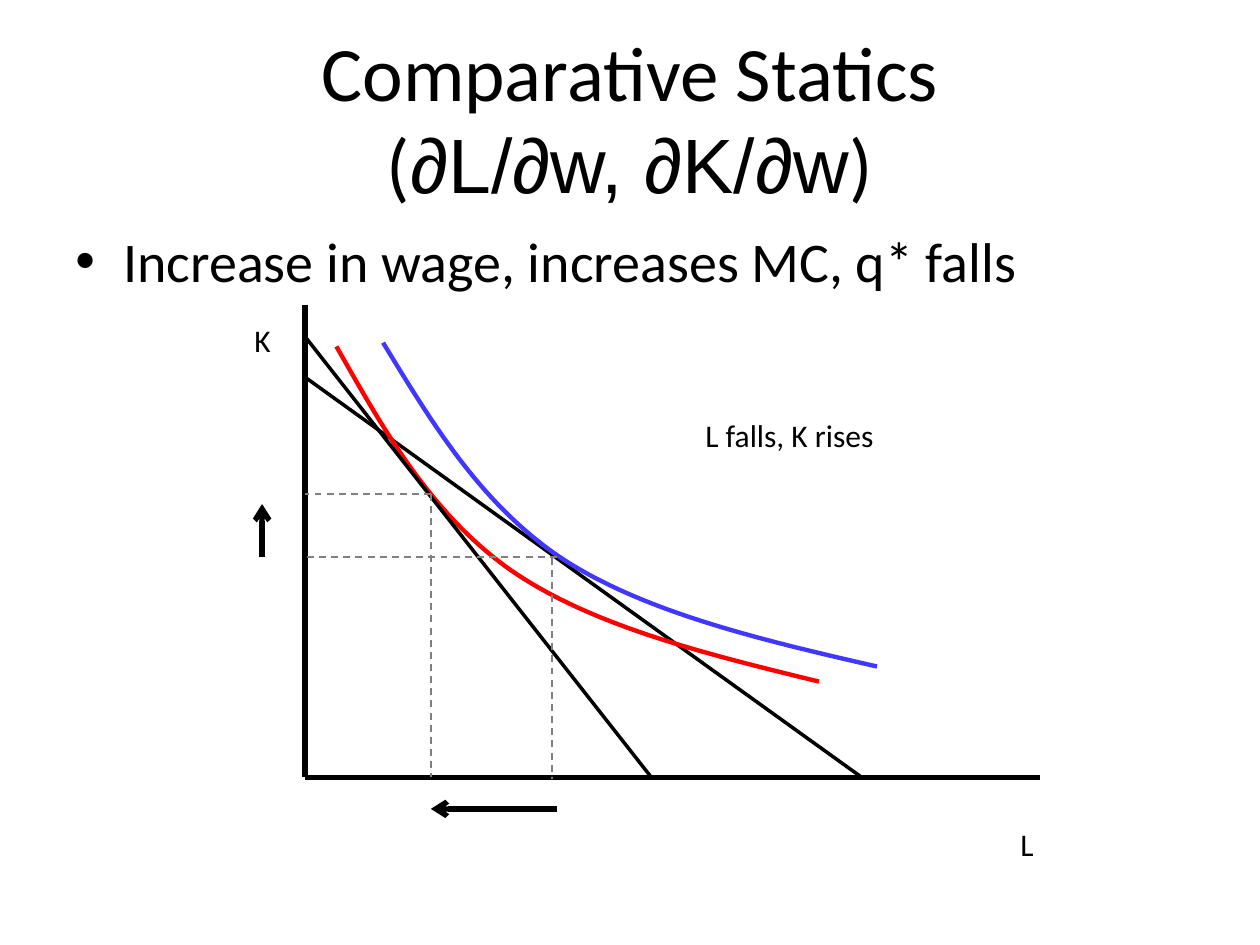
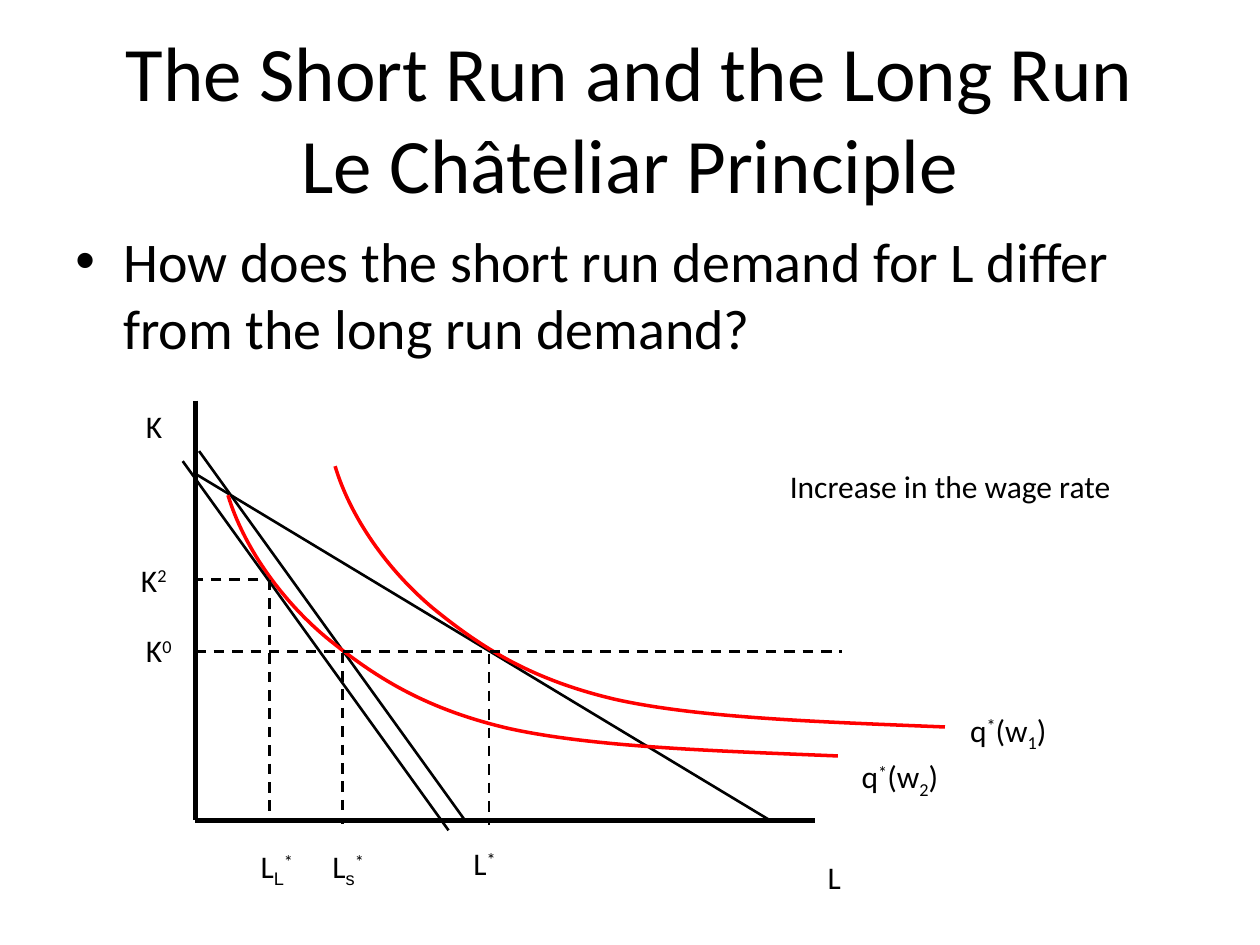
from lxml.etree import SubElement as Sub
from pptx import Presentation
from pptx.dml.color import RGBColor as Rgb
from pptx.enum.dml import MSO_LINE as Dash
from pptx.enum.shapes import MSO_CONNECTOR as Conn
from pptx.enum.text import MSO_ANCHOR as Anchor, MSO_AUTO_SIZE as Auto, PP_ALIGN as Align
from pptx.oxml.ns import qn
from pptx.util import Inches, Pt


class Theme:
    ink = Rgb(0, 0, 0)
    grey = Rgb(0x80, 0x80, 0x80)
    red = Rgb(0xFF, 0, 0)
    blue = Rgb(0x41, 0x37, 0xFF)
    font, alt = "Calibri", "Arial"
    head, body, label = Pt(44), Pt(32), Pt(18)
    axis = 3


def write(para, runs, size):
    para.font.size = size
    para.font.name = Theme.font
    para.font.color.rgb = Theme.ink
    for text, *opts in runs:
        if text == "\n":
            para.add_line_break()
            continue
        run = para.add_run()
        run.text = text
        for opt in opts:
            if isinstance(opt, str):
                run.font.name = opt
            else:
                run.font._element.set("baseline", str(opt * 1000))


def draw(shapes, start, end, color, width, dash=False, arrow=False):
    line = shapes.add_connector(Conn.STRAIGHT, *map(Inches, start + end))
    line.line.color.rgb = color
    line.line.width = Pt(width)
    if dash:
        line.line.dash_style = Dash.DASH
    props = line._element.spPr
    if arrow:
        Sub(props.find(qn("a:ln")), qn("a:tailEnd"), type="arrow")
    Sub(props, qn("a:effectLst"))


star = ("*", 30)
wage = {
    "title": [("Comparative Statics",), ("\n",), ("(",),
              ("∂L/∂w, ∂K/∂w", Theme.alt), (")",)],
    "point": "Increase in wage, increases MC, q* falls",
    "size": (8.92, 0.58),
    "axes": [(2.42, 2.42), (2.42, 6.17), (8.25, 6.17)],
    "under": [((2.43, 3), (6.84, 6.17))],
    "over": [((2.42, 2.67), (5.17, 6.17))],
    "cost": 2,
    "guides": [((4.38, 4.43), (4.38, 6.18)), ((4.42, 4.42), (2.42, 4.42)),
               ((3.42, 3.92), (2.42, 3.92)), ((3.42, 3.92), (3.42, 6.17))],
    "guide": (Theme.grey, 1),
    "moves": [((2.08, 4.42), (2.08, 4)), ((4.42, 6.42), (3.42, 6.42))],
    "curves": [
        (Theme.blue, [(3.04, 2.72), (3.43, 3.36), (3.82, 4.01), (4.47, 4.44),
                      (5.12, 4.86), (6.04, 5.08), (6.96, 5.29)]),
        (Theme.red, [(2.67, 2.75), (3.05, 3.42), (3.42, 4.08), (4.06, 4.53),
                     (4.7, 4.97), (5.6, 5.19), (6.5, 5.41)])],
    "curve": 2.5,
    "labels": [(8, 6.5, 0.36, [("L",)]), (1.92, 2.5, 0.38, [("K",)]),
               (5.5, 3.25, 1.68, [("L falls, K rises",)])],
}

bend = [(1.81, 3.93), (1.93, 4.33), (2.22, 4.75), (2.59, 5.06), (2.96, 5.36),
        (3.35, 5.62), (4.03, 5.78), (4.7, 5.93), (5.68, 5.96), (6.65, 6)]
terms = {
    "title": [("The Short Run and the Long Run",), ("\n",), ("Le Châteliar Principle",)],
    "point": "How does the short run demand for L differ from the long run demand?",
    "size": (9, 1.21),
    "axes": [(1.55, 3.18), (1.55, 6.51), (6.47, 6.51)],
    "under": [((1.55, 3.76), (6.11, 6.51)), ((1.58, 3.58), (3.69, 6.51))],
    "over": [((1.45, 3.66), (3.56, 6.59))],
    "cost": 1.5,
    "guides": [((1.55, 5.17), (6.68, 5.17)), ((3.88, 5.19), (3.88, 6.55)),
               ((2.72, 5.18), (2.72, 6.54)), ((2.14, 4.6), (2.14, 6.51)),
               ((2.05, 4.6), (1.55, 4.6))],
    "guide": (Theme.ink, 1.5),
    "moves": [],
    "curves": [(Theme.red, [(x + dx, y + dy) for x, y in bend])
               for dx, dy in [(0, 0), (0.85, -0.23)]],
    "curve": 2,
    "labels": [
        (6.47, 6.76, 0.36, [("L",)]), (1.06, 3.18, 0.38, [("K",)]),
        (1.06, 4.96, 0.47, [("K",), ("0", 30)]),
        (1.02, 4.4, 0.47, [("K",), ("2", 30)]),
        (3.66, 6.65, 0.44, [("L",), star]),
        (2.54, 6.67, 0.52, [("L",), ("s", -25, Theme.alt), star]),
        (1.97, 6.67, 0.53, [("L",), ("L", -25, Theme.alt), star]),
        (7.6, 5.59, 0.85, [("q",), star, ("(w",), ("1", -25), (")",)]),
        (6.74, 5.96, 0.85, [("q",), star, ("(w",), ("2", -25), (")",)]),
        (6.17, 3.66, 2.78, [("Increase in the wage rate",)])],
}

deck = Presentation()
deck.slide_width, deck.slide_height = Inches(10), Inches(7.5)

for graph in (wage, terms):
    slide = deck.slides.add_slide(deck.slide_layouts[5])
    shapes = slide.shapes

    title = shapes.title
    title.left, title.top, title.width, title.height = map(Inches, (0.5, 0.3, 9, 1.25))
    frame = title.text_frame
    frame.auto_size = Auto.NONE
    frame.vertical_anchor = Anchor.MIDDLE
    frame.paragraphs[0].alignment = Align.CENTER
    write(frame.paragraphs[0], graph["title"], Theme.head)

    box = shapes.add_textbox(*map(Inches, (0.5, 1.75) + graph["size"]))
    box.text_frame.word_wrap = True
    para = box.text_frame.paragraphs[0]
    para.space_before = Pt(6.4)
    write(para, [(graph["point"],)], Theme.body)
    props = para._p.get_or_add_pPr()
    props.set("marL", str(Inches(0.38)))
    props.set("indent", str(-Inches(0.38)))
    font = props.find(qn("a:defRPr"))
    font.addprevious(Sub(props, qn("a:buFont"), typeface=Theme.alt))
    font.addprevious(Sub(props, qn("a:buChar"), char="•"))

    axes = graph["axes"]
    for start, end in zip(axes, axes[1:]):
        draw(shapes, start, end, Theme.ink, Theme.axis)
    for start, end in graph["under"]:
        draw(shapes, start, end, Theme.ink, graph["cost"])

    for color, knots in graph["curves"]:
        first, *rest = [tuple(map(Inches, knot)) for knot in knots]
        pen = shapes.build_freeform(*first)
        pen.add_line_segments(rest, close=False)
        curve = pen.convert_to_shape()
        legs = list(curve._element.iter(qn("a:lnTo")))
        for i in range(0, len(legs), 3):
            arc = Sub(legs[i].getparent(), qn("a:cubicBezTo"))
            for leg in legs[i:i + 3]:
                arc.append(leg[0])
                leg.getparent().remove(leg)
        curve.shadow.inherit = False
        curve.fill.background()
        curve.line.color.rgb = color
        curve.line.width = Pt(graph["curve"])

    for start, end in graph["over"]:
        draw(shapes, start, end, Theme.ink, graph["cost"])
    for start, end in graph["guides"]:
        draw(shapes, start, end, *graph["guide"], dash=True)

    for left, top, width, text in graph["labels"]:
        box = shapes.add_textbox(*map(Inches, (left, top, width, 0.4)))
        box.text_frame.word_wrap = False
        box.text_frame.auto_size = Auto.SHAPE_TO_FIT_TEXT
        write(box.text_frame.paragraphs[0], text, Theme.label)
    for start, end in graph["moves"]:
        draw(shapes, start, end, Theme.ink, Theme.axis, arrow=True)

deck.save("out.pptx")
